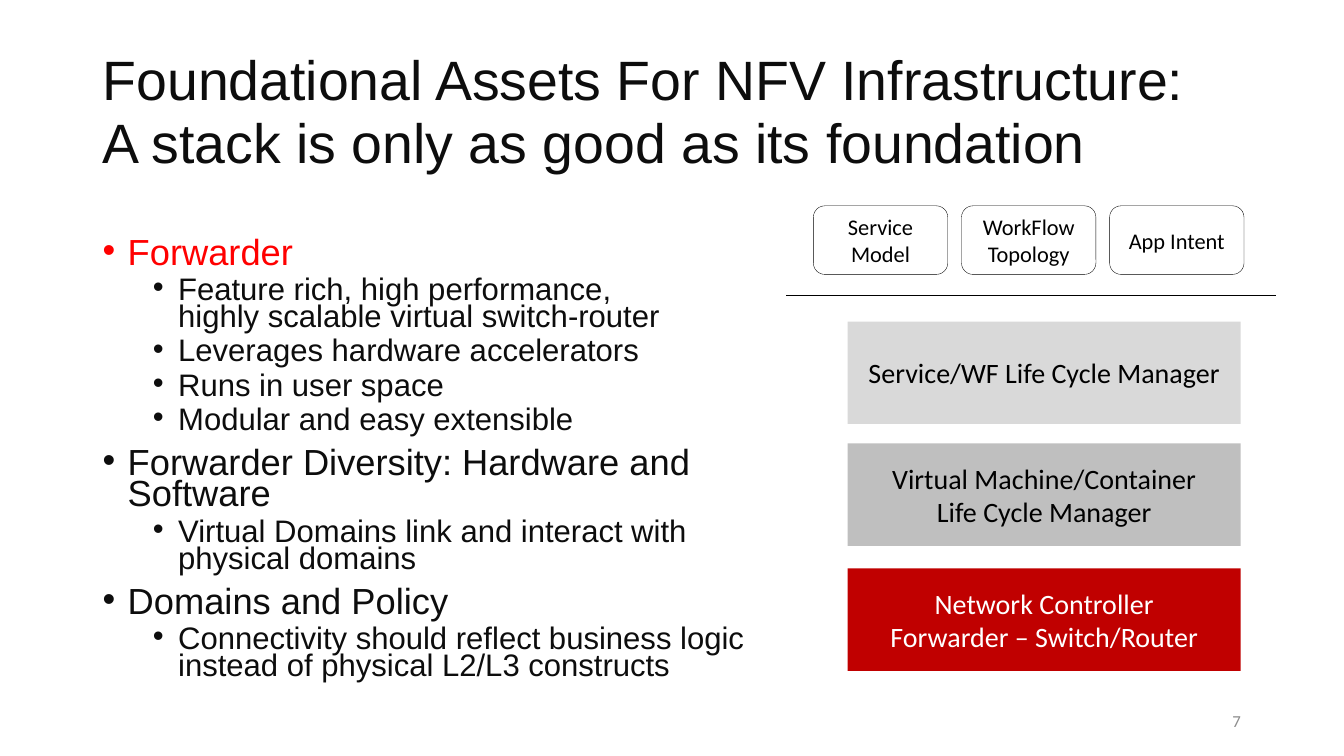
from lxml import etree
from pptx import Presentation
from pptx.dml.color import RGBColor
from pptx.enum.shapes import MSO_CONNECTOR, MSO_SHAPE
from pptx.enum.text import MSO_ANCHOR, PP_ALIGN
from pptx.oxml.ns import qn
from pptx.util import Pt

RECTANGLE, ROUNDED = MSO_SHAPE.RECTANGLE, MSO_SHAPE.ROUNDED_RECTANGLE
STRAIGHT = MSO_CONNECTOR.STRAIGHT
TOP, MIDDLE = MSO_ANCHOR.TOP, MSO_ANCHOR.MIDDLE
LEFT, CENTER, RIGHT = PP_ALIGN.LEFT, PP_ALIGN.CENTER, PP_ALIGN.RIGHT
COLORS = {
    "ink": "0D0D0D", "highlight": "FF0000", "number": "8C8C8C",
    "black": "000000", "white": "FFFFFF", "red": "C00000",
    "gray": "BFBFBF", "light": "D9D9D9",
}


def color(name):
    return RGBColor.from_string(COLORS[name])


def write(shape, text, font, size, ink, align=LEFT, anchor=MIDDLE):
    """Fill a shape with text: \\n starts a paragraph, \\v breaks a line."""
    frame = shape.text_frame
    frame.word_wrap = True
    frame.vertical_anchor = anchor
    frame.text = text
    for paragraph in frame.paragraphs:
        paragraph.alignment = align
        paragraph.font.name = font
        paragraph.font.size = Pt(size)
        paragraph.font.color.rgb = color(ink)


presentation = Presentation()
presentation.slide_width, presentation.slide_height = Pt(960), Pt(540)
slide = presentation.slides.add_slide(presentation.slide_layouts[6])
shapes = slide.shapes

# Title
title = shapes.add_textbox(Pt(66.2), Pt(28.8), Pt(828), Pt(104.4))
write(title, "Foundational Assets For NFV Infrastructure:\v"
      "A stack is only as good as its foundation", "Arial", 39.6, "ink")
title.text_frame.paragraphs[0].line_spacing = 0.94

# Bullet list: level, text
bullets = [
    (0, "Forwarder"),
    (1, "Feature rich, high performance,\vhighly scalable virtual switch-router"),
    (1, "Leverages hardware accelerators"),
    (1, "Runs in user space"),
    (1, "Modular and easy extensible"),
    (0, "Forwarder Diversity: Hardware and Software"),
    (1, "Virtual Domains link and interact with physical domains"),
    (0, "Domains and Policy"),
    (1, "Connectivity should reflect business logic instead of physical L2/L3 constructs"),
]
body = shapes.add_textbox(Pt(66.2), Pt(167.8), Pt(509), Pt(313.9))
body.text_frame.word_wrap = True
for index, (level, text) in enumerate(bullets):
    paragraph = body.text_frame.paragraphs[0] if index == 0 else body.text_frame.add_paragraph()
    paragraph.text = text
    paragraph.level = level
    properties = paragraph._p.get_or_add_pPr()
    properties.set("marL", str(Pt(18 + 36 * level)))
    properties.set("indent", str(-Pt(18)))
    etree.SubElement(properties, qn("a:buFont"), typeface="Arial")
    etree.SubElement(properties, qn("a:buChar"), char="•")
    paragraph.line_spacing = 0.73
    if index:
        paragraph.space_before = Pt(5 if level else 10)
    paragraph.font.name = "Arial"
    paragraph.font.size = Pt(22.2 if level else 25.9)
    paragraph.font.color.rgb = color("ink" if index else "highlight")

# Inputs above the dividing line
for column, text in enumerate(["Service\nModel", "WorkFlow Topology", "App Intent"]):
    box = shapes.add_shape(ROUNDED, Pt(581 + 105.8 * column), Pt(147), Pt(96), Pt(49))
    box.shadow.inherit = False
    box.fill.solid()
    box.fill.fore_color.rgb = color("white")
    box.line.color.rgb = color("black")
    box.line.width = Pt(0.25)
    write(box, text, "Calibri", 16, "black", CENTER)

divider = shapes.add_connector(STRAIGHT, Pt(561.6), Pt(211), Pt(911.5), Pt(211))
divider.line.color.rgb = color("black")
divider.line.width = Pt(0.75)
etree.SubElement(divider._element.spPr, qn("a:effectLst"))

# Stack layers: top, fill, font colour, text
layers = [
    (229.7, "light", "black", "Service/WF Life Cycle Manager"),
    (316.8, "gray", "black", "Virtual Machine/Container\vLife Cycle Manager"),
    (406.1, "red", "white", "Network Controller\nForwarder – Switch/Router"),
]
for top, fill, ink, text in layers:
    layer = shapes.add_shape(RECTANGLE, Pt(605.5), Pt(top), Pt(280.8), Pt(73.2))
    layer.shadow.inherit = False
    layer.fill.solid()
    layer.fill.fore_color.rgb = color(fill)
    layer.line.fill.background()
    write(layer, text, "Calibri", 20, ink, CENTER)

slide_number = shapes.add_textbox(Pt(846.7), Pt(500.4), Pt(46.8), Pt(28.8))
write(slide_number, "7", "Calibri", 12, "number", RIGHT)

presentation.save("out.pptx")
